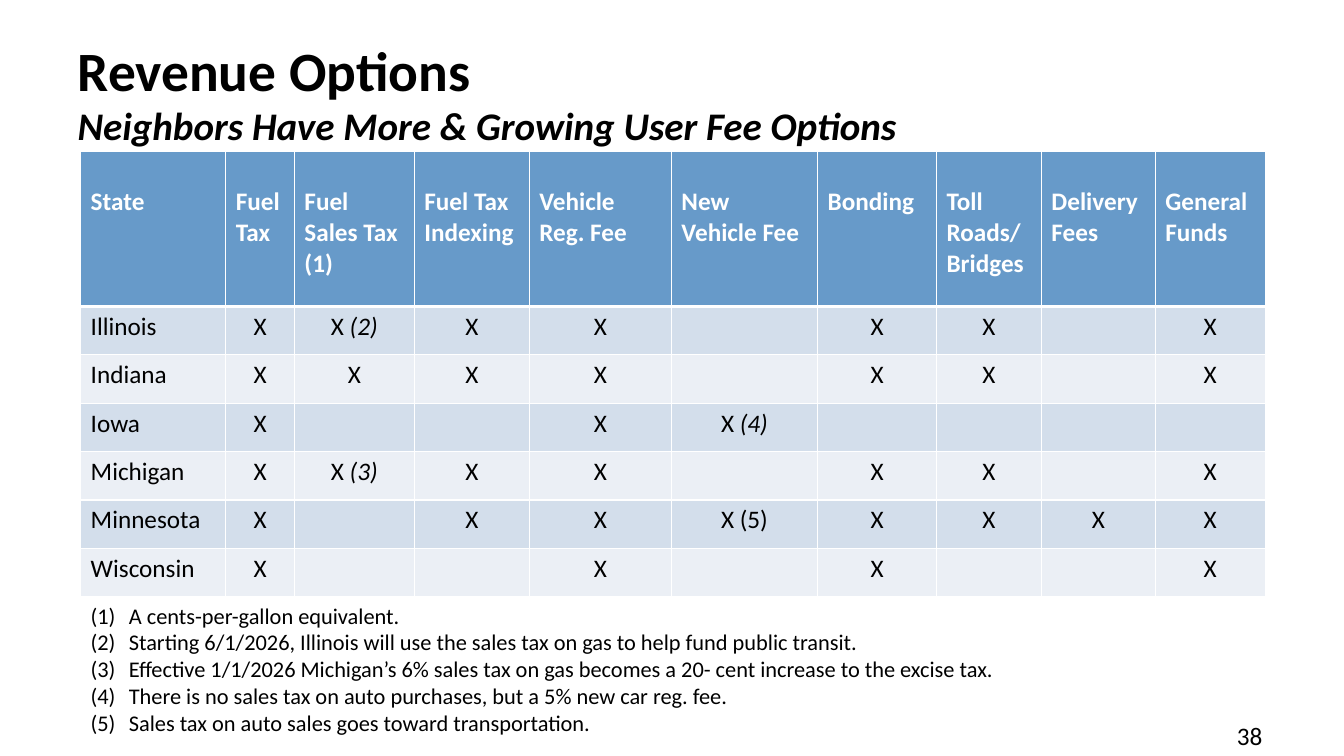
from dataclasses import dataclass

from lxml import etree
from pptx import Presentation
from pptx.dml.color import RGBColor
from pptx.enum.text import MSO_ANCHOR, PP_ALIGN
from pptx.oxml.ns import qn
from pptx.util import Inches, Pt

LEFT, CENTER = PP_ALIGN.LEFT, PP_ALIGN.CENTER
TOP, BOTTOM = MSO_ANCHOR.TOP, MSO_ANCHOR.BOTTOM
WHITE = RGBColor(0xFF, 0xFF, 0xFF)
BLACK = RGBColor(0x00, 0x00, 0x00)
HEADER_BLUE = RGBColor(0x67, 0x9A, 0xC9)
BAND_DARK = RGBColor(0xD3, 0xDE, 0xEB)
BAND_LIGHT = RGBColor(0xEB, 0xEF, 0xF5)
FONT = "Calibri"


@dataclass(frozen=True)
class Mark:
    text: str
    note: str = ""


@dataclass(frozen=True)
class Column:
    heading: str
    width: float


@dataclass(frozen=True)
class State:
    name: str
    marks: tuple[Mark, ...]


X, NONE = Mark("X"), Mark("")

COLUMNS = (
    Column("State", 1.44),
    Column("Fuel Tax", 0.68),
    Column("Fuel Sales Tax (1)", 1.19),
    Column("Fuel Tax Indexing", 1.14),
    Column("Vehicle Reg. Fee", 1.41),
    Column("New Vehicle Fee", 1.45),
    Column("Bonding", 1.18),
    Column("Toll Roads/\nBridges", 1.04),
    Column("Delivery Fees", 1.13),
    Column("General Funds", 1.09),
)
STATES = (
    State("Illinois", (X, Mark("X ", "(2)"), X, X, NONE, X, X, NONE, X)),
    State("Indiana", (X, X, X, X, NONE, X, X, NONE, X)),
    State("Iowa", (X, NONE, NONE, X, Mark("X ", "(4)"), NONE, NONE, NONE, NONE)),
    State("Michigan", (X, Mark("X ", "(3)"), X, X, NONE, X, X, NONE, X)),
    State("Minnesota", (X, NONE, X, X, Mark("X (5)"), X, X, X, X)),
    State("Wisconsin", (X, NONE, NONE, X, NONE, X, NONE, NONE, X)),
)
FOOTNOTES = (
    "A cents-per-gallon equivalent.",
    "Starting 6/1/2026, Illinois will use the sales tax on gas to help fund public transit.",
    "Effective 1/1/2026 Michigan’s 6% sales tax on gas becomes a 20- cent increase to the excise tax.",
    "There is no sales tax on auto purchases, but a 5% new car reg. fee.",
    "Sales tax on auto sales goes toward transportation.",
)
HEADER_HEIGHT, ROW_HEIGHT = 1.54, 0.48


def add_run(p, text: str, size: float, color: RGBColor = BLACK, **extra) -> None:
    r = p.add_run()
    r.text = text
    r.font.color.rgb = color
    formats = {"name": FONT, "size": Pt(size), "bold": False, "italic": False} | extra
    for name, value in formats.items():
        setattr(r.font, name, value)


def set_borders(cell, bottom: float) -> None:
    tc_pr = cell._tc.get_or_add_tcPr()
    widths = {"a:lnL": 1, "a:lnR": 1, "a:lnT": 1, "a:lnB": bottom}
    for position, (tag, width) in enumerate(widths.items()):
        ln = etree.Element(qn(tag), w=str(Pt(width)))
        fill = etree.SubElement(ln, qn("a:solidFill"))
        etree.SubElement(fill, qn("a:srgbClr"), val=str(WHITE))
        tc_pr.insert(position, ln)


def fill_cell(cell, color: RGBColor, bottom: float = 1) -> None:
    cell.fill.solid()
    cell.fill.fore_color.rgb = color
    set_borders(cell, bottom)


def add_title(s) -> None:
    title = s.shapes.title
    title.left, title.top = Inches(0.67), Inches(0.28)
    title.width, title.height = Inches(12), Inches(1.25)
    tf = title.text_frame
    tf.word_wrap = True
    tf.vertical_anchor = BOTTOM
    p = tf.paragraphs[0]
    p.alignment = LEFT
    p.line_spacing = 0.95
    add_run(p, "Revenue Options", 39.6, bold=True)
    p.add_line_break()
    add_run(p, "Neighbors Have More & Growing User Fee Options", 27.9, bold=True, italic=True)


def add_revenue_table(s) -> None:
    width = sum(column.width for column in COLUMNS)
    height = HEADER_HEIGHT + ROW_HEIGHT * len(STATES)
    table = s.shapes.add_table(
        len(STATES) + 1, len(COLUMNS), Inches(0.8), Inches(1.5), Inches(width), Inches(height)
    ).table
    for row in table.rows:
        row.height = Inches(ROW_HEIGHT)
    table.rows[0].height = Inches(HEADER_HEIGHT)
    for i, column in enumerate(COLUMNS):
        table.columns[i].width = Inches(column.width)
        cell = table.cell(0, i)
        fill_cell(cell, HEADER_BLUE, bottom=3)
        cell.margin_top = Inches(0.35)
        tf = cell.text_frame
        for n, line in enumerate(column.heading.split("\n")):
            p = tf.add_paragraph() if n else tf.paragraphs[0]
            add_run(p, line, 18, WHITE, bold=True)
    for row_index, state in enumerate(STATES, 1):
        for i, mark in enumerate((Mark(state.name), *state.marks)):
            cell = table.cell(row_index, i)
            fill_cell(cell, BAND_DARK if row_index % 2 else BAND_LIGHT)
            p = cell.text_frame.paragraphs[0]
            p.alignment = CENTER if i else LEFT
            if mark.text:
                add_run(p, mark.text, 18)
            if mark.note:
                add_run(p, mark.note, 18, italic=True)


def add_text_box(s, left: float, top: float, width: float, height: float):
    tf = s.shapes.add_textbox(Inches(left), Inches(top), Inches(width), Inches(height)).text_frame
    tf.word_wrap = True
    tf.vertical_anchor = TOP
    return tf


def add_footnotes(s) -> None:
    tf = add_text_box(s, 0.8, 5.92, 11.87, 1.45)
    for n, note in enumerate(FOOTNOTES):
        p = tf.add_paragraph() if n else tf.paragraphs[0]
        p_pr = p._p.get_or_add_pPr()
        p_pr.set("marL", str(Inches(0.38)))
        p_pr.set("indent", str(-Inches(0.38)))
        etree.SubElement(p_pr, qn("a:buFont"), typeface="+mj-lt")
        etree.SubElement(p_pr, qn("a:buAutoNum"), type="arabicParenBoth")
        add_run(p, note, 16)


def main() -> None:
    prs = Presentation()
    prs.slide_width, prs.slide_height = Inches(13.33), Inches(7.5)
    s = prs.slides.add_slide(prs.slide_layouts[5])
    add_title(s)
    add_revenue_table(s)
    add_footnotes(s)
    page_number = add_text_box(s, 12.17, 7.1, 1, 0.4)
    add_run(page_number.paragraphs[0], "38", 18)
    prs.save("out.pptx")


if __name__ == "__main__":
    main()
